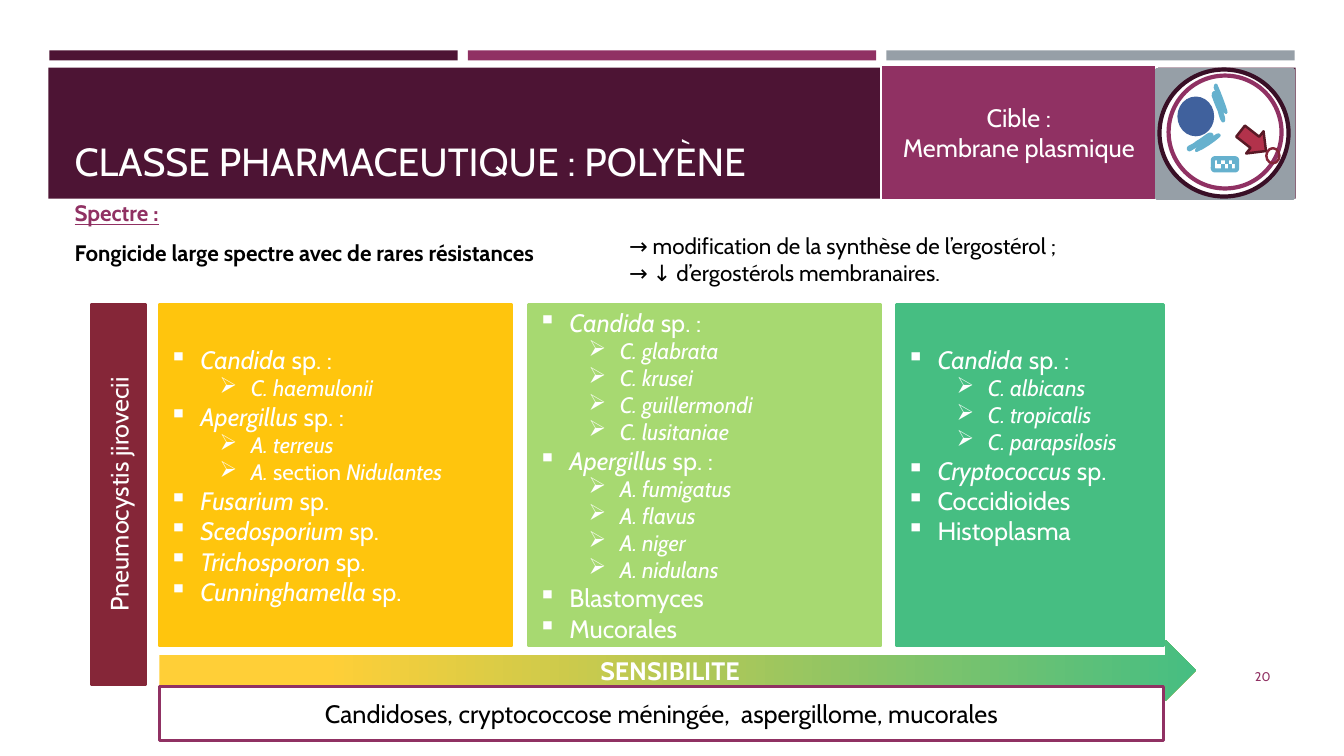
from dataclasses import dataclass, field
from typing import Any, NamedTuple

from lxml.etree import SubElement
from pptx import Presentation
from pptx.dml.color import RGBColor
from pptx.enum.shapes import MSO_CONNECTOR, MSO_SHAPE
from pptx.enum.text import MSO_ANCHOR, MSO_AUTO_SIZE, PP_ALIGN
from pptx.oxml.ns import qn
from pptx.util import Pt

PX = 9144
COLORS = {
    "plum": "4D1434", "magenta": "903163", "grey": "969FA7", "white": "FFFFFF",
    "black": "000000", "yellow": "FFC50D", "amber": "FFCF37", "lime": "A7D971",
    "green": "46BE82", "wine": "852638", "ring": "390F26", "blue": "40619D",
    "sky": "66B1CE", "red": "B2324B", "maroon": "591926",
}
BULLETS = {0: ("▪", 31), 1: ("➢", 81)}
SIZES = {0: 18, 1: 16}
RECT, OVAL = MSO_SHAPE.RECTANGLE, MSO_SHAPE.OVAL


class Box(NamedTuple):
    left: int
    top: int
    width: int
    height: int


@dataclass
class Block:
    box: Box
    fill: str = ""
    line: str = ""
    weight: float = 1.75
    kind: MSO_SHAPE = RECT
    rotation: float = 0
    lines: list[str] = field(default_factory=list)
    ink: str = "white"
    bold: bool = False


class Entry(NamedTuple):
    text: str
    level: int = 0


class Spectrum(NamedTuple):
    box: Box
    color: str
    entries: list[Entry]
    bottom: int = 5


def rgb(name: str) -> RGBColor:
    return RGBColor.from_string(COLORS[name])


def assign(target: Any, values: dict[str, Any]) -> None:
    for name, value in values.items():
        setattr(target, name, value)


def place(target: Any, box: Box) -> None:
    assign(target, {name: value * PX for name, value in box._asdict().items()})


def frame_setup(frame: Any, anchor: MSO_ANCHOR, bottom: int = 5) -> None:
    assign(frame, {
        "word_wrap": True, "auto_size": MSO_AUTO_SIZE.NONE, "vertical_anchor": anchor,
        "margin_left": 10 * PX, "margin_right": 10 * PX,
        "margin_top": 5 * PX, "margin_bottom": bottom * PX,
    })


def add_run(paragraph: Any, text: str, size: float, color: str, **formats: Any) -> None:
    run = paragraph.add_run()
    run.text = text
    assign(run.font, {"name": "Cabin", "size": Pt(size), **formats})
    run.font.color.rgb = rgb(color)


def write(frame: Any, lines: list[str], size: float, color: str,
          align: PP_ALIGN = PP_ALIGN.LEFT, **formats: Any) -> None:
    for index, line in enumerate(lines):
        paragraph = frame.paragraphs[0] if index == 0 else frame.add_paragraph()
        paragraph.alignment = align
        add_run(paragraph, line, size, color, **formats)


def style(shape: Any, fill: str, line: str, weight: float) -> None:
    shape.shadow.inherit = False
    if fill:
        shape.fill.solid()
        shape.fill.fore_color.rgb = rgb(fill)
    else:
        shape.fill.background()
    if line:
        shape.line.color.rgb = rgb(line)
        shape.line.width = Pt(weight)
    else:
        shape.line.fill.background()


def add_block(shapes: Any, block: Block) -> Any:
    shape = shapes.add_shape(block.kind, *(value * PX for value in block.box))
    shape.rotation = block.rotation
    style(shape, block.fill, block.line, block.weight)
    if block.lines:
        frame_setup(shape.text_frame, MSO_ANCHOR.MIDDLE)
        write(shape.text_frame, block.lines, 18, block.ink, PP_ALIGN.CENTER, bold=block.bold)
    return shape


def add_spectrum(shapes: Any, spectrum: Spectrum) -> None:
    frame = add_block(shapes, Block(spectrum.box, spectrum.color, spectrum.color)).text_frame
    frame_setup(frame, MSO_ANCHOR.MIDDLE, spectrum.bottom)
    for index, entry in enumerate(spectrum.entries):
        paragraph = frame.paragraphs[0] if index == 0 else frame.add_paragraph()
        assign(paragraph, {"alignment": PP_ALIGN.LEFT, "level": entry.level})
        mark, margin = BULLETS[entry.level]
        properties = paragraph._p.get_or_add_pPr()
        properties.set("marL", str(margin * PX))
        properties.set("indent", str(-31 * PX))
        SubElement(properties, qn("a:buChar")).set("char", mark)
        for part, text in enumerate(entry.text.split("*")):
            if text:
                add_run(paragraph, text, SIZES[entry.level], "white", italic=part % 2 == 1)


def add_note(shapes: Any, box: Box, lines: list[str], size: float, color: str,
             anchor: MSO_ANCHOR, align: PP_ALIGN) -> None:
    frame = shapes.add_textbox(*(value * PX for value in box)).text_frame
    frame_setup(frame, anchor)
    write(frame, lines, size, color, align)


def add_organelle(shapes: Any, knots: list[tuple[int, int]]) -> None:
    outline = []
    for start in range(0, len(knots) - 1, 3):
        a, b, c, d = knots[start:start + 4]
        for t in (0.25, 0.5, 0.75, 1):
            u = 1 - t
            outline.append(tuple(
                round(PX * (u**3 * a[k] + 3 * u * u * t * b[k] + 3 * u * t * t * c[k] + t**3 * d[k]))
                for k in (0, 1)))
    builder = shapes.build_freeform(knots[0][0] * PX, knots[0][1] * PX, 1.0)
    builder.add_line_segments(outline, close=True)
    style(builder.convert_to_shape(), "sky", "sky", 1.75)


def add_fold(shapes: Any, x: int, top: int) -> None:
    fold = shapes.add_connector(MSO_CONNECTOR.STRAIGHT, x * PX, top * PX, x * PX, (top + 6) * PX)
    fold.line.color.rgb = rgb("sky")
    fold.line.width = Pt(3)
    SubElement(fold._element.spPr, qn("a:effectLst"))


BANDS = [Block(Box(49 + 415 * i, 50, 405, 10), color)
         for i, color in enumerate(("plum", "magenta", "grey"))]
BANDS.append(Block(Box(48, 67, 1237, 130), "plum"))

SPECTRA = [
    Spectrum(Box(889, 302, 265, 339), "green", [
        Entry("*Candida* sp. :"), Entry("*C. albicans*", 1), Entry("*C. tropicalis*", 1),
        Entry("*C. parapsilosis*", 1), Entry("*Cryptococcus* sp."),
        Entry("Coccidioides"), Entry("Histoplasma")], 65),
    Spectrum(Box(524, 302, 350, 339), "lime", [
        Entry("*Candida* sp. :"), Entry("*C. glabrata*", 1), Entry("*C. krusei*", 1),
        Entry("*C. guillermondi*", 1), Entry("*C. lusitaniae*", 1), Entry("*Apergillus* sp. :"),
        Entry("*A. fumigatus*", 1), Entry("*A. flavus*", 1), Entry("*A. niger*", 1),
        Entry("*A. nidulans*", 1), Entry("Blastomyces"), Entry("Mucorales")]),
    Spectrum(Box(158, 302, 350, 339), "yellow", [
        Entry("*Candida* sp. :"), Entry("*C. haemulonii*", 1), Entry("*Apergillus* sp. :"),
        Entry("*A. terreus*", 1), Entry("*A. *section *Nidulantes*", 1), Entry("*Fusarium* sp."),
        Entry("*Scedosporium* sp."), Entry("*Trichosporon* sp."), Entry("*Cunninghamella* sp.")]),
]
SENSITIVITY = Block(Box(158, 635, 1028, 60), "green", kind=MSO_SHAPE.RIGHT_ARROW,
                    lines=["SENSIBILITE"], bold=True)
RESISTANT = Block(Box(90, 302, 55, 377), "wine", "wine", lines=["Pneumocystis jirovecii"])
PANELS = [
    Block(Box(158, 681, 996, 54), "white", "magenta", 2.25, ink="black",
          lines=["Candidoses, cryptococcose méningée,  aspergillome, mucorales"]),
    Block(Box(874, 64, 273, 135), "magenta", "white", lines=["Cible :", "Membrane plasmique"]),
]
CELL = [
    Block(Box(1147, 69, 136, 128), "grey", "grey"),
    Block(Box(1150, 69, 128, 126), "white", "ring", 3, OVAL),
    Block(Box(1159, 75, 112, 112), "white", "magenta", 3, OVAL),
    Block(Box(1169, 97, 34, 37), "blue", "blue", kind=OVAL),
    Block(Box(1203, 157, 24, 12), "", "sky", 3, MSO_SHAPE.ROUNDED_RECTANGLE),
]
FOLDS = [(1209, 157), (1213, 163), (1217, 157), (1220, 163), (1224, 157)]
ORGANELLES = [
    [(1187, 141), (1191, 139), (1197, 134), (1199, 133), (1202, 132), (1203, 134), (1202, 135),
     (1202, 136), (1196, 138), (1195, 139), (1194, 140), (1194, 142), (1196, 141), (1198, 141),
     (1205, 135), (1207, 134), (1209, 133), (1211, 134), (1208, 136), (1205, 139), (1192, 148),
     (1188, 149), (1185, 151), (1187, 148), (1188, 147), (1188, 147), (1191, 145), (1192, 144),
     (1192, 144), (1192, 142), (1191, 143), (1189, 143), (1182, 148), (1180, 149), (1178, 149),
     (1178, 147), (1179, 146), (1180, 145), (1184, 144), (1187, 141)],
    [(1209, 110), (1207, 106), (1204, 98), (1203, 95), (1203, 92), (1204, 91), (1205, 92),
     (1206, 93), (1207, 99), (1208, 101), (1209, 102), (1210, 103), (1210, 100), (1209, 98),
     (1206, 89), (1205, 87), (1205, 85), (1206, 82), (1207, 86), (1209, 90), (1215, 106),
     (1216, 110), (1217, 114), (1215, 111), (1214, 110), (1213, 109), (1212, 106), (1212, 105),
     (1211, 105), (1210, 104), (1210, 106), (1211, 109), (1214, 116), (1214, 118), (1214, 121),
     (1213, 121), (1212, 119), (1211, 118), (1210, 114), (1209, 110)],
]
TARGET = [
    Block(Box(1227, 126, 32, 28), "red", "maroon", kind=MSO_SHAPE.RIGHT_ARROW, rotation=38),
    Block(Box(1256, 147, 13, 15), "", "wine", kind=OVAL),
]


def main() -> None:
    deck = Presentation()
    assign(deck, {"slide_width": 1333 * PX, "slide_height": 750 * PX})
    slide = deck.slides.add_slide(deck.slide_layouts[1])
    shapes = slide.shapes
    for band in BANDS:
        add_block(shapes, band)

    heading, summary = slide.placeholders
    for holder, box, anchor in ((heading, Box(64, 77, 1206, 111), MSO_ANCHOR.BOTTOM),
                                (summary, Box(64, 193, 1206, 84), MSO_ANCHOR.TOP)):
        place(holder, box)
        frame_setup(holder.text_frame, anchor)
        shapes.element.append(holder.element)
    write(heading.text_frame, ["CLASSE PHARMACEUTIQUE : POLYÈNE"], 28, "white")
    write(summary.text_frame, ["Spectre :", "Fongicide large spectre avec de rares résistances"],
          16, "black", bold=True)
    for paragraph in summary.text_frame.paragraphs:
        assign(paragraph, {"space_before": Pt(3.2), "space_after": Pt(6)})
        properties = paragraph._p.get_or_add_pPr()
        properties.set("marL", "0")
        properties.set("indent", "0")
        SubElement(properties, qn("a:buNone"))
    label = summary.text_frame.paragraphs[0].runs[0].font
    label.underline = True
    label.color.rgb = rgb("magenta")

    add_note(shapes, Box(1155, 651, 115, 40), ["20"], 9, "magenta", MSO_ANCHOR.MIDDLE, PP_ALIGN.RIGHT)
    for spectrum in SPECTRA:
        add_spectrum(shapes, spectrum)
    gradient = add_block(shapes, SENSITIVITY).fill
    gradient.gradient()
    gradient.gradient_angle = 0
    for stop, position, color in zip(gradient.gradient_stops, (0.16, 1), ("amber", "green")):
        stop.position = position
        stop.color.rgb = rgb(color)
    add_note(shapes, Box(614, 225, 551, 91),
             ["→ modification de la synthèse de l’ergostérol ;", "→ ↓ d’ergostérols membranaires."],
             16, "black", MSO_ANCHOR.TOP, PP_ALIGN.LEFT)
    add_block(shapes, RESISTANT).text_frame._txBody.bodyPr.set("vert", "vert270")
    for block in PANELS + CELL:
        add_block(shapes, block)
    for x, top in FOLDS:
        add_fold(shapes, x, top)
    for knots in ORGANELLES:
        add_organelle(shapes, knots)
    for block in TARGET:
        add_block(shapes, block)
    deck.save("out.pptx")


if __name__ == "__main__":
    main()
